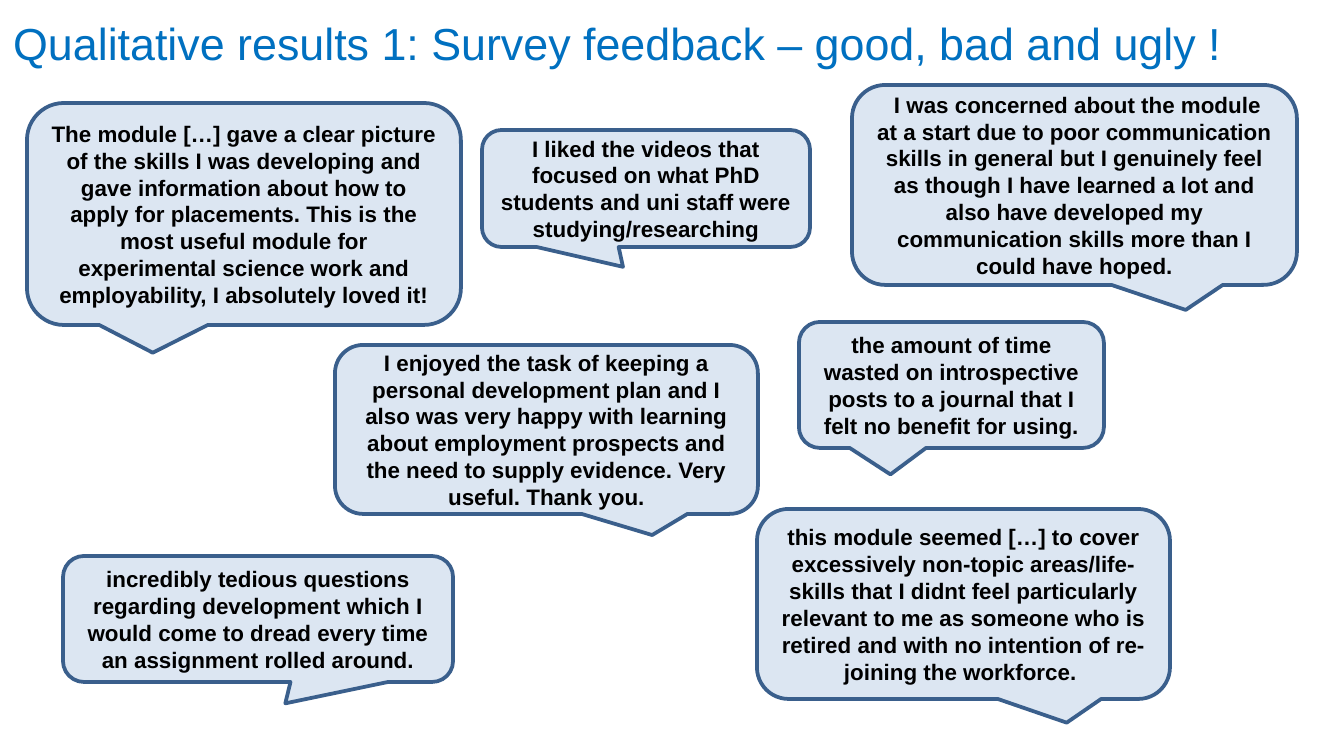
from pptx import Presentation
from pptx.dml.color import RGBColor
from pptx.enum.shapes import MSO_SHAPE as Shape
from pptx.enum.text import MSO_ANCHOR as Anchor, MSO_AUTO_SIZE as AutoSize, PP_ALIGN as Align
from pptx.util import Inches, Pt

SLIDE_SIZE = (1344, 756)
PX = Inches(10) / SLIDE_SIZE[0]
FONT = "Arial"
TITLE_BLUE = RGBColor(0x00, 0x70, 0xC0)
BUBBLE_FILL = RGBColor(0xDC, 0xE6, 0xF2)
BUBBLE_LINE = RGBColor(0x3A, 0x5F, 0x8C)
BLACK = RGBColor(0x00, 0x00, 0x00)

TITLE = "Qualitative results 1: Survey feedback – good, bad and ugly !"
TITLE_BOX = (0, 9, 1275, 67)

LOWER_RIGHT = (0.25, 0.625)
QUOTES = [
    ((27, 103, 434, 222), (-0.21, 0.625),
     "The module […] gave a clear picture of the skills I was developing and gave "
     "information about how to apply for placements. This is the most useful module for "
     "experimental science work and employability, I absolutely loved it!"),
    ((852, 85, 445, 200), LOWER_RIGHT,
     " I was concerned about the module at a start due to poor communication skills in "
     "general but I genuinely feel as though I have learned a lot and also have developed "
     "my communication skills more than I could have hoped."),
    ((335, 345, 423, 169), LOWER_RIGHT,
     "I enjoyed the task of keeping a personal development plan and I also was very happy "
     "with learning about employment prospects and the need to supply evidence. Very "
     "useful. Thank you."),
    ((482, 130, 328, 117), (-0.07, 0.67),
     "I liked the videos that focused on what PhD students and uni staff were "
     "studying/researching"),
    ((757, 509, 413, 190), LOWER_RIGHT,
     "this module seemed […] to cover excessively non-topic areas/life-skills that I didnt "
     "feel particularly relevant to me as someone who is retired and with no intention of "
     "re-joining the workforce. "),
    ((799, 322, 305, 126), (-0.2, 0.71),
     "the amount of time wasted on introspective posts to a journal that I felt no benefit "
     "for using."),
    ((63, 556, 390, 126), (0.07, 0.67),
     "incredibly tedious questions regarding development which I would come to dread every "
     "time an assignment rolled around."),
]


def emu(lengths):
    return [round(length * PX) for length in lengths]


def write(frame, text, size, color, bold=False, align=Align.LEFT):
    frame.word_wrap = True
    paragraph = frame.paragraphs[0]
    paragraph.text = text
    paragraph.alignment = align
    font = paragraph.font
    font.name, font.size, font.bold = FONT, Pt(size), bold
    font.color.rgb = color


def add_quote(slide, box, tail, text):
    bubble = slide.shapes.add_shape(Shape.ROUNDED_RECTANGULAR_CALLOUT, *emu(box))
    bubble.adjustments[0], bubble.adjustments[1] = tail
    bubble.shadow.inherit = False
    bubble.fill.solid()
    bubble.fill.fore_color.rgb = BUBBLE_FILL
    bubble.line.color.rgb = BUBBLE_LINE
    bubble.line.width = Pt(2)
    bubble.text_frame.vertical_anchor = Anchor.MIDDLE
    write(bubble.text_frame, text, 12, BLACK, True, Align.CENTER)


def main():
    deck = Presentation()
    deck.slide_width, deck.slide_height = emu(SLIDE_SIZE)
    slide = deck.slides.add_slide(deck.slide_layouts[6])
    for box, tail, text in QUOTES:
        add_quote(slide, box, tail, text)
    heading = slide.shapes.add_textbox(*emu(TITLE_BOX)).text_frame
    heading.auto_size = AutoSize.SHAPE_TO_FIT_TEXT
    write(heading, TITLE, 24, TITLE_BLUE)
    deck.save("out.pptx")


if __name__ == "__main__":
    main()
